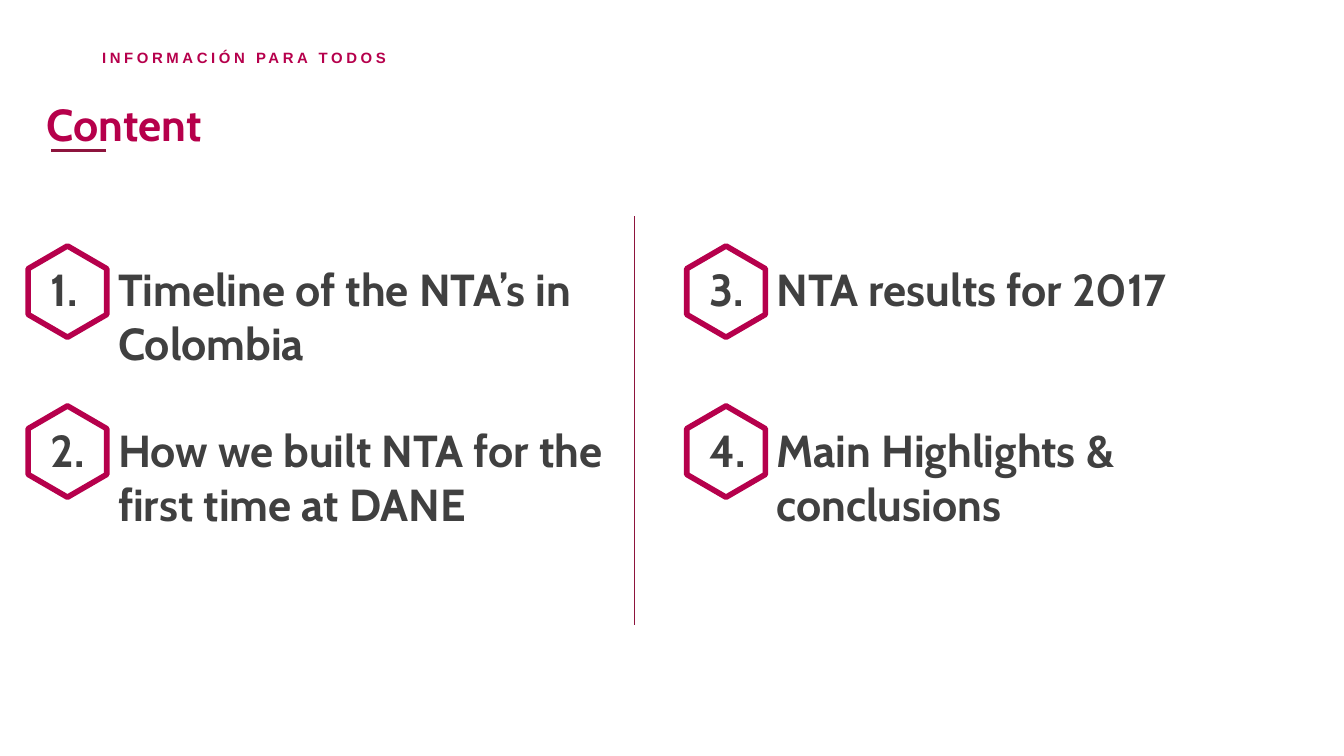
from collections import namedtuple
from pptx import Presentation
from pptx.dml.color import RGBColor
from pptx.enum.shapes import MSO_CONNECTOR
from pptx.enum.text import MSO_AUTO_SIZE
from pptx.oxml.ns import qn
from pptx.util import Inches, Pt
from lxml.etree import SubElement

COLORS = {"magenta": "B6004C", "title": "B6004B", "wine": "8D143D", "ink": "404040"}
CELL = Inches(0.1)
LINE_HEIGHT = 28.75
ITEM_PITCH = 11.9
Box = namedtuple("Box", "left top width height")


def cells(*counts):
    return [round(count * CELL) for count in counts]


def rgb(name):
    return RGBColor.from_string(COLORS[name])


def add_text(slide, box, paragraphs, font="Cabin", size=24, color="ink",
             tracking=None, leading=None, gaps=(), start=None, insets=None):
    label = slide.shapes.add_textbox(*cells(*box))
    frame = label.text_frame
    frame.word_wrap = True
    frame.auto_size = MSO_AUTO_SIZE.SHAPE_TO_FIT_TEXT
    if insets:
        (frame.margin_left, frame.margin_top,
         frame.margin_right, frame.margin_bottom) = cells(*insets)
    for index, words in enumerate(paragraphs):
        paragraph = frame.add_paragraph() if index else frame.paragraphs[0]
        if start:
            properties = paragraph._p.get_or_add_pPr()
            properties.set("marL", str(5 * CELL))
            properties.set("indent", str(-5 * CELL))
            numbering = SubElement(properties, qn("a:buAutoNum"), type="arabicPeriod")
            if start > 1:
                numbering.set("startAt", str(start))
        if index and gaps:
            paragraph.space_before = Pt(gaps[index - 1])
        if leading:
            paragraph.line_spacing = leading
        run = paragraph.add_run()
        run.text = words
        run.font.name = font
        run.font.size = Pt(size)
        run.font.bold = True
        run.font.color.rgb = rgb(color)
        if tracking:
            run._r.get_or_add_rPr().set("spc", str(tracking))


def add_rule(slide, start, end, weight):
    rule = slide.shapes.add_connector(MSO_CONNECTOR.STRAIGHT, *cells(*start, *end))
    rule.line.color.rgb = rgb("wine")
    rule.line.width = Pt(weight)
    SubElement(rule._element.spPr, qn("a:effectLst"))


def add_hexagon(slide, box):
    corners = [(0.5, 0), (0, 0.25), (0, 0.75), (0.5, 1), (1, 0.75), (1, 0.25)]
    points = [cells(box.left + x * box.width, box.top + y * box.height)
              for x, y in corners]
    builder = slide.shapes.build_freeform(*points[0])
    builder.add_line_segments(points[1:], close=True)
    hexagon = builder.convert_to_shape()
    hexagon.shadow.inherit = False
    hexagon.fill.background()
    hexagon.line.color.rgb = rgb("magenta")
    hexagon.line.width = Pt(3)


def add_header(slide, box):
    add_text(slide, Box(box.left + 4.9, box.top, 30.7, 1.7), ["INFORMACIÓN PARA TODOS"],
             font="Arial", size=8, color="magenta", tracking=190, leading=1.3,
             insets=(0.2, 0.2, 0, 0))
    add_text(slide, Box(box.left, box.top + 3.7, box.width, 5), ["Content"], color="title")
    underline = box.top + box.height
    add_rule(slide, (box.left + 5.4, underline), (box.left + 1.3, underline), 2)


def add_agenda_column(slide, box, topics, start, blank_lines):
    add_text(slide, Box(box.left + 0.7, box.top + 0.7, box.width, box.height), topics,
             start=start, gaps=[blank_lines * LINE_HEIGHT])
    for row in range(len(topics)):
        add_hexagon(slide, Box(box.left, box.top + row * ITEM_PITCH, 5.85, 6.8))


def main():
    deck = Presentation()
    deck.slide_width, deck.slide_height = cells(100, 56.25)
    slide = deck.slides.add_slide(deck.slide_layouts[6])
    add_header(slide, Box(2.5, 3, 75.2, 8.2))
    add_rule(slide, (47.2, 46.5), (47.2, 16.1), 0.25)
    agenda = [
        (["Timeline of the NTA’s in Colombia",
          "How we built NTA for the first time at DANE"], 1, 1),
        (["NTA results for 2017", "Main Highlights & conclusions"], 3, 2),
    ]
    for column, (topics, start, blank_lines) in enumerate(agenda):
        box = Box(2.1 + column * 49, 18.3, 43.8, 25.2)
        add_agenda_column(slide, box, topics, start, blank_lines)
    deck.save("out.pptx")


if __name__ == "__main__":
    main()
